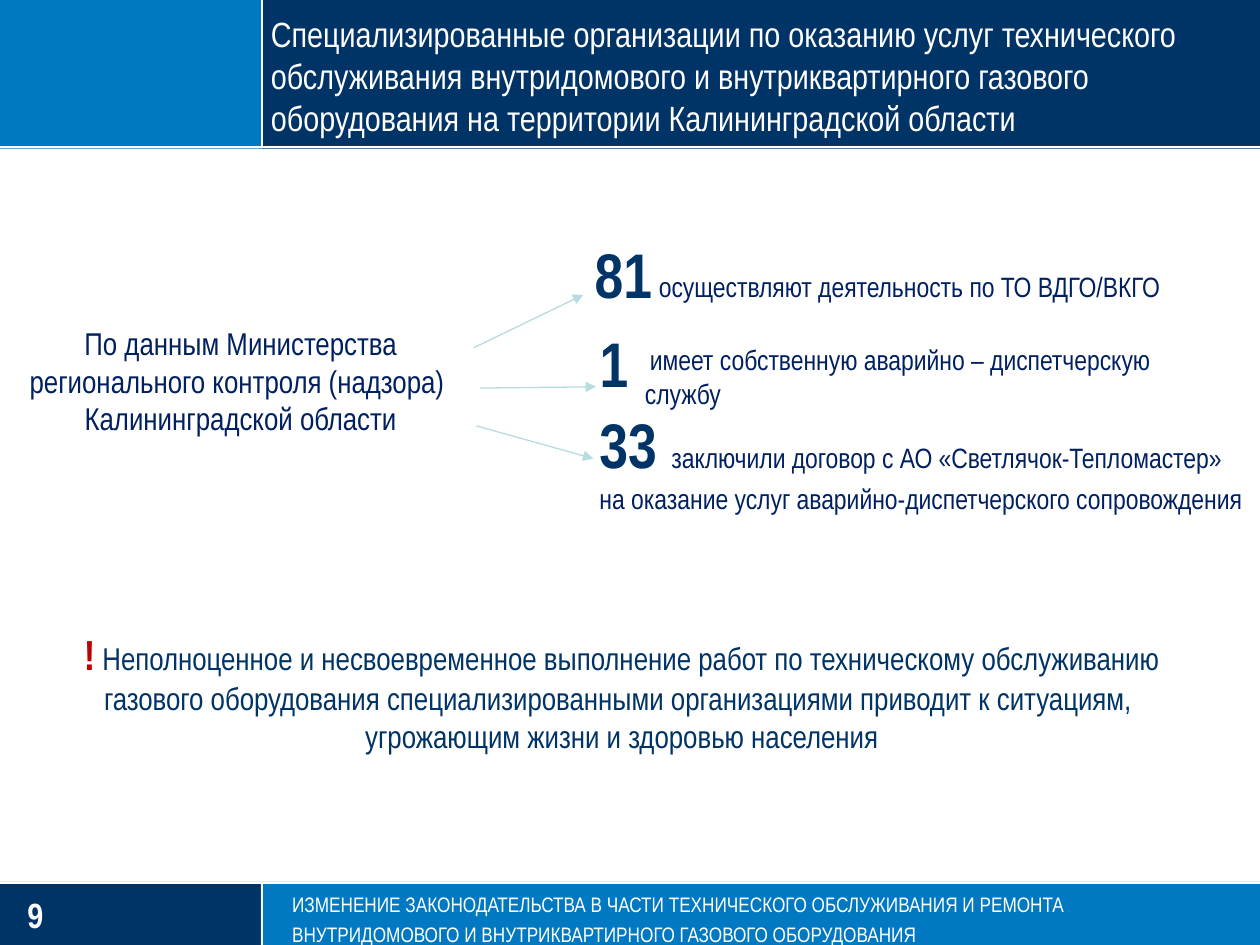
from lxml.etree import SubElement
from pptx import Presentation
from pptx.dml.color import RGBColor
from pptx.enum.shapes import MSO_CONNECTOR, MSO_SHAPE
from pptx.enum.text import MSO_ANCHOR, PP_ALIGN
from pptx.oxml.ns import qn
from pptx.util import Inches, Pt

NAVY = RGBColor(0x00, 0x33, 0x66)
BLUE = RGBColor(0x00, 0x79, 0xC2)
INK = RGBColor(0x00, 0x20, 0x60)
RED = RGBColor(0xC0, 0x00, 0x00)
PALE = RGBColor(0xB6, 0xDC, 0xDF)
WHITE = RGBColor(0xFF, 0xFF, 0xFF)

FONT = "Arial Narrow"
WIDTH, HEIGHT = 10, 7.5
DIVIDER = 2.08
MARGINS = (0.1, 0.05, 0.1, 0.05)


def add_band(slide, box, color):
    band = slide.shapes.add_shape(MSO_SHAPE.RECTANGLE, *map(Inches, box))
    band.shadow.inherit = False
    band.fill.solid()
    band.fill.fore_color.rgb = color
    band.line.fill.background()


def add_rule(slide, start, end, color=WHITE, weight=1.25, arrow=False):
    rule = slide.shapes.add_connector(
        MSO_CONNECTOR.STRAIGHT, *map(Inches, (*start, *end)))
    rule.line.color.rgb = color
    rule.line.width = Pt(weight)
    if arrow:
        SubElement(rule.line._get_or_add_ln(), qn("a:tailEnd"), type="triangle")
    SubElement(rule._element.spPr, qn("a:effectLst"))


def add_text(slide, box, paragraphs, align=PP_ALIGN.LEFT, anchor=MSO_ANCHOR.TOP,
             margins=MARGINS, spacing=None, first_indent=0):
    """Each paragraph is a list of (text, size, color, bold) runs."""
    frame = slide.shapes.add_textbox(*map(Inches, box)).text_frame
    frame.word_wrap = True
    frame.vertical_anchor = anchor
    (frame.margin_left, frame.margin_top,
     frame.margin_right, frame.margin_bottom) = map(Inches, margins)
    for index, runs in enumerate(paragraphs):
        paragraph = frame.add_paragraph() if index else frame.paragraphs[0]
        paragraph.alignment = align
        if spacing:
            paragraph.line_spacing = Pt(spacing)
        if first_indent:
            paragraph._p.get_or_add_pPr().set("indent", str(Inches(first_indent)))
        for text, size, color, bold in runs:
            run = paragraph.add_run()
            run.text = text
            run.font.name = FONT
            run.font.size = Pt(size)
            run.font.color.rgb = color
            run.font.bold = bold


def add_header(slide, left, top, width, height):
    split = left + DIVIDER
    base = top + height - 0.01
    add_band(slide, (left, top, DIVIDER, height), BLUE)
    add_band(slide, (split, top, width - DIVIDER, height), NAVY)
    add_rule(slide, (left, base), (left + width, base))
    add_rule(slide, (split, top), (split, base))
    title = ("Специализированные организации по оказанию услуг технического "
             "обслуживания внутридомового и внутриквартирного газового "
             "оборудования на территории Калининградской области")
    add_text(slide, (split + 0.07, top, 7.61, height - 0.08),
             [[(title, 20, WHITE, False)]],
             anchor=MSO_ANCHOR.BOTTOM, margins=(0, 0, 0, 0))


def add_footer(slide, left, top, width, height):
    split = left + DIVIDER
    add_band(slide, (left, top, width, height), BLUE)
    add_band(slide, (left, top + 0.01, DIVIDER - 0.01, height - 0.01), NAVY)
    add_rule(slide, (split, top), (split, top + height))
    add_rule(slide, (left, top + 0.01), (left + width, top + 0.01))
    add_text(slide, (left + 0.12, top + 0.04, 1.73, 0.38), [[("9", 20, WHITE, True)]])
    topic = ("ИЗМЕНЕНИЕ ЗАКОНОДАТЕЛЬСТВА В ЧАСТИ ТЕХНИЧЕСКОГО ОБСЛУЖИВАНИЯ И РЕМОНТА "
             "ВНУТРИДОМОВОГО И ВНУТРИКВАРТИРНОГО ГАЗОВОГО ОБОРУДОВАНИЯ")
    add_text(slide, (split + 0.14, top - 0.01, 7.6, 0.45), [[(topic, 12, WHITE, False)]],
             margins=(0.1, 0.05, 0.4, 0.05), spacing=17)


def add_data_source(slide, left, top, width, height):
    add_text(slide, (left, top, width, height),
             [[("По данным Министерства регионального контроля (надзора) ", 18, INK, False)],
              [("Калининградской области", 18, INK, False)]], align=PP_ALIGN.CENTER)


def add_findings(slide, left, top, width, height):
    """Three counts, the first two with the caption in a box of its own."""
    right = left + width
    counts = [
        ("81", 0, 0, (0.47, 0.27, 4.35, 0.37), 0.04,
         "осуществляют деятельность по ТО ВДГО/ВКГО"),
        ("1", 0.04, 0.71, (0.4, 0.85, 4.34, 0.64), 0.04,
         "имеет собственную аварийно – диспетчерскую службу"),
    ]
    for count, dx, dy, (x, y, w, h), indent, caption in counts:
        add_text(slide, (left + dx, top + dy, 1.41, 0.71), [[(count, 36, NAVY, True)]])
        add_text(slide, (left + x, top + y, w, h), [[(caption, 16, INK, False)]],
                 first_indent=indent)
    contract_left = left + 0.04
    add_text(slide, (contract_left, top + 1.35, right - contract_left, height - 1.35),
             [[("33 ", 36, NAVY, True),
               ("заключили договор с АО «Светлячок-Тепломастер»", 16, INK, False)],
              [("на оказание услуг аварийно-диспетчерского сопровождения", 16, INK, False)]])


def add_arrows(slide, left, top):
    arrows = [((0, 0.42), (0.87, 0)),
              ((0.05, 0.74), (0.97, 0.73)),
              ((0.02, 1.04), (0.95, 1.3))]
    for (x1, y1), (x2, y2) in arrows:
        add_rule(slide, (left + x1, top + y1), (left + x2, top + y2),
                 PALE, 0.75, arrow=True)


def add_warning(slide, left, top, width, height):
    warning = (" Неполноценное и несвоевременное выполнение работ по техническому "
               "обслуживанию газового оборудования специализированными "
               "организациями приводит к ситуациям, ")
    add_text(slide, (left, top, width, height),
             [[("!", 24, RED, True), (warning, 18, NAVY, False)],
              [("угрожающим жизни и здоровью населения", 18, NAVY, False)]],
             align=PP_ALIGN.CENTER)


def main():
    presentation = Presentation()
    presentation.slide_width = Inches(WIDTH)
    presentation.slide_height = Inches(HEIGHT)
    slide = presentation.slides.add_slide(presentation.slide_layouts[6])
    add_footer(slide, 0, 7, WIDTH, 0.5)
    add_header(slide, 0, 0, WIDTH, 1.18)
    add_warning(slide, 0.19, 4.94, 9.49, 1.05)
    add_data_source(slide, -0.07, 2.52, 3.96, 1.01)
    add_findings(slide, 4.62, 1.82, 5.38, 2.33)
    add_arrows(slide, 3.76, 2.34)
    presentation.save("out.pptx")


if __name__ == "__main__":
    main()
